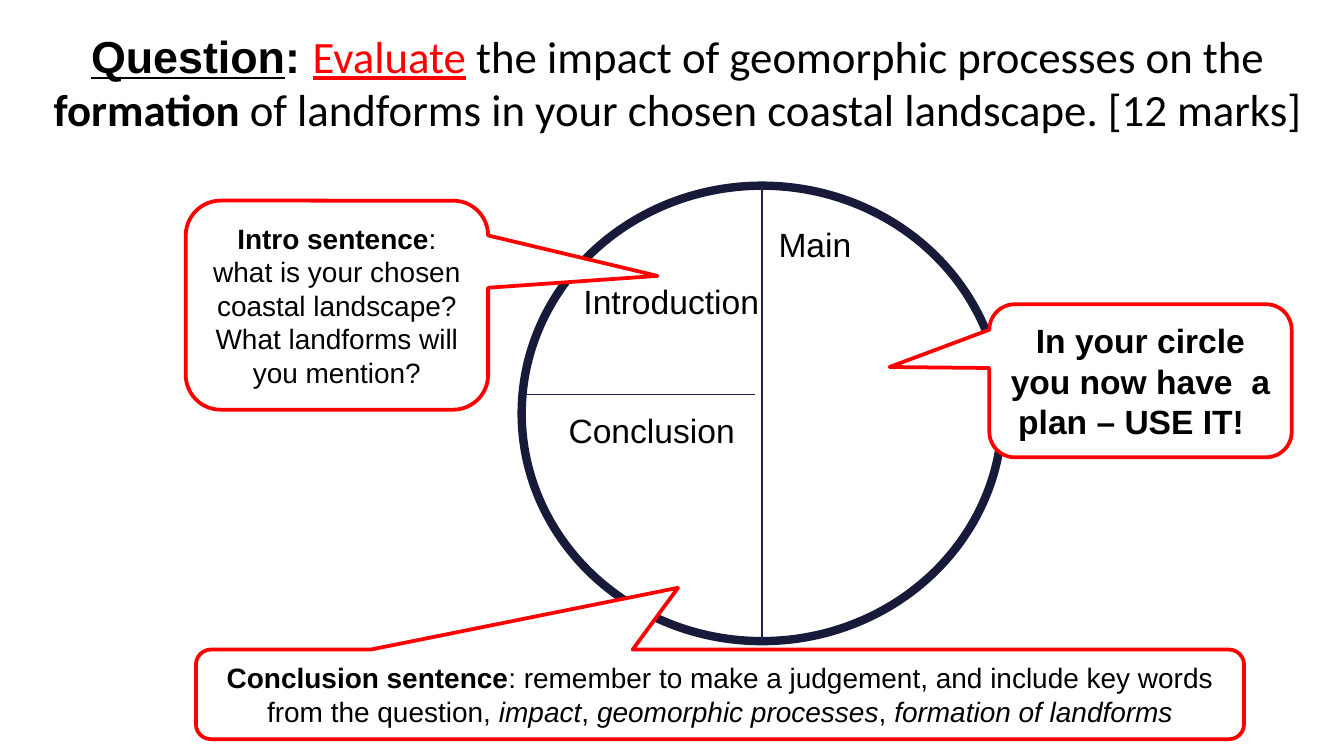
"""Build a slide that plans a 12-mark answer inside a circle."""
from dataclasses import dataclass

from lxml import etree
from pptx import Presentation
from pptx.dml.color import RGBColor
from pptx.enum.shapes import MSO_CONNECTOR, MSO_SHAPE
from pptx.enum.text import MSO_ANCHOR, MSO_AUTO_SIZE, PP_ALIGN
from pptx.oxml.ns import qn
from pptx.slide import Slide
from pptx.util import Pt

COLORS = {"text": "000000", "white": "FFFFFF", "red": "FF0000",
          "ring": "181A39", "divider": "1E214C"}
CALLOUT, ELLIPSE = MSO_SHAPE.ROUNDED_RECTANGULAR_CALLOUT, MSO_SHAPE.OVAL
STRAIGHT = MSO_CONNECTOR.STRAIGHT
CENTER, LEFT = PP_ALIGN.CENTER, PP_ALIGN.LEFT
MIDDLE, TOP = MSO_ANCHOR.MIDDLE, MSO_ANCHOR.TOP
NO_FIT = MSO_AUTO_SIZE.NONE


def rgb(name):
    return RGBColor.from_string(COLORS[name])


@dataclass
class Painter:
    s: Slide
    font: str = "Arial"

    def add_text(self, tf, runs, size, align=CENTER, anchor=MIDDLE, wrap=True):
        tf.auto_size, tf.word_wrap, tf.vertical_anchor = NO_FIT, wrap, anchor
        p = tf.paragraphs[0]
        p.alignment = align
        p.font.name, p.font.size = self.font, Pt(size)
        p.font.color.rgb = rgb("text")
        for text, style in runs:
            r = p.add_run()
            r.text = text
            r.font.bold = "b" in style
            r.font.italic = "i" in style
            r.font.underline = "u" in style
            if "c" in style:
                r.font.name = "Calibri"
            if "r" in style:
                r.font.color.rgb = rgb("red")

    def title(self, box, runs, size):
        sp = self.s.shapes.title
        sp.left, sp.top, sp.width, sp.height = map(Pt, box)
        tf = sp.text_frame
        tf.margin_left = tf.margin_right = Pt(5)
        tf.margin_top = tf.margin_bottom = Pt(3)
        self.add_text(tf, runs, size)

    def shape(self, kind, box, line, width):
        sp = self.s.shapes.add_shape(kind, *map(Pt, box))
        sp.shadow.inherit = False
        sp.fill.solid()
        sp.fill.fore_color.rgb = rgb("white")
        sp.line.color.rgb = rgb(line)
        sp.line.width = Pt(width)
        return sp

    def callout(self, box, tip, runs, size):
        sp = self.shape(CALLOUT, box, "red", 2)
        sp.adjustments[0], sp.adjustments[1] = tip
        sp.adjustments[2] = 0.167
        self.add_text(sp.text_frame, runs, size)

    def divider(self, *ends):
        line = self.s.shapes.add_connector(STRAIGHT, *map(Pt, ends))
        line.line.color.rgb = rgb("divider")
        line.line.width = Pt(0.75)
        etree.SubElement(line._element.spPr, qn("a:effectLst"))

    def label(self, box, text):
        tf = self.s.shapes.add_textbox(*map(Pt, box)).text_frame
        self.add_text(tf, [(text, "")], 18, LEFT, TOP, False)


def main():
    prs = Presentation()
    prs.slide_width, prs.slide_height = Pt(720), Pt(405)
    paint = Painter(prs.slides.add_slide(prs.slide_layouts[5]))

    paint.title((20, 10, 686, 68), [
        ("Question", "bu"), (": ", "b"), ("Evaluate", "cur"),
        (" the impact of geomorphic processes on the ", "c"),
        ("formation", "cb"),
        (" of landforms in your chosen coastal landscape. [12 marks]", "c"),
    ], 24)

    left, top, width, height = circle = (279.5, 99.5, 257.5, 244)
    center = left + width / 2
    paint.shape(ELLIPSE, circle, "ring", 4.5)
    paint.divider(center, top, center, top + height)
    paint.divider(left, 211.5, center - 3.5, 211.5)

    for x, y, w, text in [(305.5, 147, 110, "Introduction"),
                          (410, 116.5, 65.5, "Main"),
                          (297.5, 216, 106.5, "Conclusion")]:
        paint.label((x, y, w, 29), text)

    paint.callout((99.5, 107.5, 162, 112), (1.06, -0.14), [
        ("Intro sentence", "b"),
        (": what is your chosen coastal landscape? "
         "What landforms will you mention?", ""),
    ], 15)
    paint.callout((105, 348, 561.5, 48), (-0.04, -1.19), [
        ("Conclusion sentence", "b"),
        (": remember to make a judgement, and include key words "
         "from the question, ", ""),
        ("impact", "i"), (", ", ""), ("geomorphic processes", "i"),
        (", ", ""), ("formation of landforms", "i"),
    ], 15)
    paint.callout((530, 163, 162, 82), (-0.83, -0.09), [
        ("In your circle you now have  a plan – USE IT!  ", "b"),
    ], 18)
    prs.save("out.pptx")


if __name__ == "__main__":
    main()
